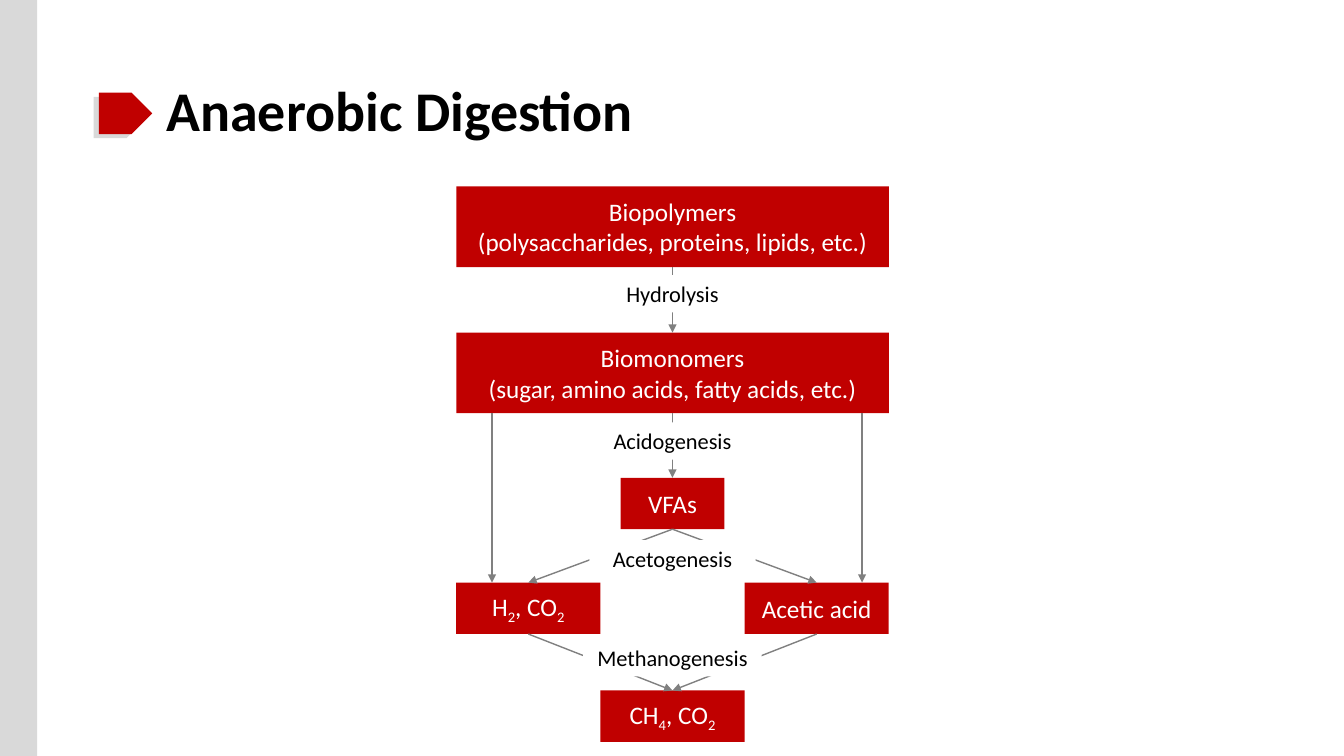
from dataclasses import dataclass
from itertools import groupby

from lxml.etree import SubElement
from pptx import Presentation
from pptx.dml.color import RGBColor
from pptx.enum.shapes import MSO_CONNECTOR as Connector, MSO_SHAPE as Shape
from pptx.enum.text import MSO_ANCHOR as Anchor, MSO_AUTO_SIZE as AutoSize, PP_ALIGN as Align
from pptx.oxml.ns import qn
from pptx.shapes.autoshape import Shape as AutoShape
from pptx.slide import Slide
from pptx.text.text import _Paragraph as Paragraph
from pptx.util import Inches, Pt


@dataclass(frozen=True)
class Theme:
    font: str = "Calibri"
    red: RGBColor = RGBColor(0xC0, 0x00, 0x00)
    pale: RGBColor = RGBColor(0xD9, 0xD9, 0xD9)
    grey: RGBColor = RGBColor(0x80, 0x80, 0x80)
    white: RGBColor = RGBColor(0xFF, 0xFF, 0xFF)
    black: RGBColor = RGBColor(0x00, 0x00, 0x00)
    title_size: int = 40
    box_size: int = 18
    label_size: int = 16
    line_width: int = 1


@dataclass(frozen=True)
class Block:
    """A red box of the flow chart, centred on x."""
    x: float
    top: float
    width: float
    height: float
    lines: tuple[str, ...]

    @property
    def left(self) -> float:
        return self.x - self.width / 2

    @property
    def bottom(self) -> float:
        return self.top + self.height


@dataclass(frozen=True)
class Arrow:
    source: Block
    target: Block
    start_x: float
    end_x: float


@dataclass(frozen=True)
class Label:
    text: str
    top: float
    width: float = 1.65


THEME = Theme()
CENTRE = 6.67
BRANCH = 1.43  # distance of the side branches from the centre, and small box width
SMALL = 0.51
LARGE = (4.29, 0.8)
LABEL_HEIGHT = 0.37

POLYMERS = Block(CENTRE, 1.85, *LARGE, ("Biopolymers", "(polysaccharides, proteins, lipids, etc.)"))
MONOMERS = Block(CENTRE, 3.3, *LARGE, ("Biomonomers", "(sugar, amino acids, fatty acids, etc.)"))
ACIDS = Block(CENTRE, 4.74, 1.03, SMALL, ("VFAs",))
HYDROGEN = Block(CENTRE - BRANCH, 5.78, BRANCH, SMALL, ("H2, CO2",))
ACETIC = Block(CENTRE + BRANCH, 5.78, BRANCH, SMALL, ("Acetic acid",))
METHANE = Block(CENTRE, 6.85, BRANCH, SMALL, ("CH4, CO2",))
BLOCKS = (POLYMERS, MONOMERS, ACIDS, HYDROGEN, ACETIC, METHANE)

STEPS = (
    (POLYMERS, MONOMERS), (MONOMERS, ACIDS), (ACIDS, HYDROGEN),
    (ACIDS, ACETIC), (HYDROGEN, METHANE), (ACETIC, METHANE),
)
ARROWS = (
    *(Arrow(source, target, source.x, target.x) for source, target in STEPS),
    Arrow(MONOMERS, HYDROGEN, 4.88, 4.88),
    Arrow(MONOMERS, ACETIC, 8.55, 8.55),
)
LABELS = (
    Label("Hydrolysis", 2.73),
    Label("Acidogenesis", 4.19),
    Label("Acetogenesis", 5.36),
    Label("Methanogenesis", 6.34, 1.77),
)


def add_filled(page: Slide, kind: Shape, left: float, top: float,
               width: float, height: float, color: RGBColor) -> AutoShape:
    shape = page.shapes.add_shape(kind, Inches(left), Inches(top), Inches(width), Inches(height))
    shape.shadow.inherit = False
    shape.fill.solid()
    shape.fill.fore_color.rgb = color
    shape.line.fill.background()
    return shape


def style(para: Paragraph, size: int, color: RGBColor, align: Align, bold: bool = False) -> None:
    para.alignment = align
    para.font.name = THEME.font
    para.font.size = Pt(size)
    para.font.bold = bold
    para.font.color.rgb = color


def add_formula(para: Paragraph, text: str) -> None:
    """Write text with its digits as subscripts."""
    for is_digit, letters in groupby(text, str.isdigit):
        span = para.add_run()
        span.text = "".join(letters)
        if is_digit:
            span._r.get_or_add_rPr().set("baseline", "-25000")


def add_block(page: Slide, block: Block) -> None:
    box = add_filled(page, Shape.RECTANGLE, block.left, block.top,
                     block.width, block.height, THEME.red)
    frame = box.text_frame
    frame.vertical_anchor = Anchor.MIDDLE
    for index, line in enumerate(block.lines):
        para = frame.add_paragraph() if index else frame.paragraphs[0]
        add_formula(para, line)
        style(para, THEME.box_size, THEME.white, Align.CENTER)


def add_arrow(page: Slide, arrow: Arrow) -> None:
    line = page.shapes.add_connector(
        Connector.STRAIGHT, Inches(arrow.start_x), Inches(arrow.source.bottom),
        Inches(arrow.end_x), Inches(arrow.target.top))
    line.line.color.rgb = THEME.grey
    line.line.width = Pt(THEME.line_width)
    SubElement(line.line._get_or_add_ln(), qn("a:tailEnd"), type="triangle")
    SubElement(line._element.spPr, qn("a:effectLst"))


def add_label(page: Slide, label: Label) -> None:
    box = add_filled(page, Shape.RECTANGLE, CENTRE - label.width / 2, label.top,
                     label.width, LABEL_HEIGHT, THEME.white)
    frame = box.text_frame
    frame.word_wrap = True
    frame.auto_size = AutoSize.SHAPE_TO_FIT_TEXT
    frame.vertical_anchor = Anchor.TOP
    para = frame.paragraphs[0]
    para.text = label.text
    style(para, THEME.label_size, THEME.black, Align.CENTER)


def add_title(page: Slide, text: str) -> None:
    title = page.shapes.title
    title.left, title.top = Inches(1.55), Inches(0.4)
    title.width, title.height = Inches(10.86), Inches(1.45)
    frame = title.text_frame
    frame.auto_size = AutoSize.NONE
    frame.vertical_anchor = Anchor.MIDDLE
    para = frame.paragraphs[0]
    para.text = text
    para.line_spacing = 0.9
    style(para, THEME.title_size, THEME.black, Align.LEFT, bold=True)


def main() -> None:
    deck = Presentation()
    deck.slide_width, deck.slide_height = Inches(13.33), Inches(7.5)
    page = deck.slides.add_slide(deck.slide_layouts[5])

    add_filled(page, Shape.RECTANGLE, 0, 0, 0.37, 7.5, THEME.pale)
    for left, top, color in ((0.93, 0.96, THEME.pale), (0.98, 0.92, THEME.red)):
        add_filled(page, Shape.PENTAGON, left, top, 0.53, 0.41, color)
    add_title(page, "Anaerobic Digestion")

    for block in BLOCKS:
        add_block(page, block)
    for arrow in ARROWS:
        add_arrow(page, arrow)
    for label in LABELS:
        add_label(page, label)
    deck.save("out.pptx")


if __name__ == "__main__":
    main()
